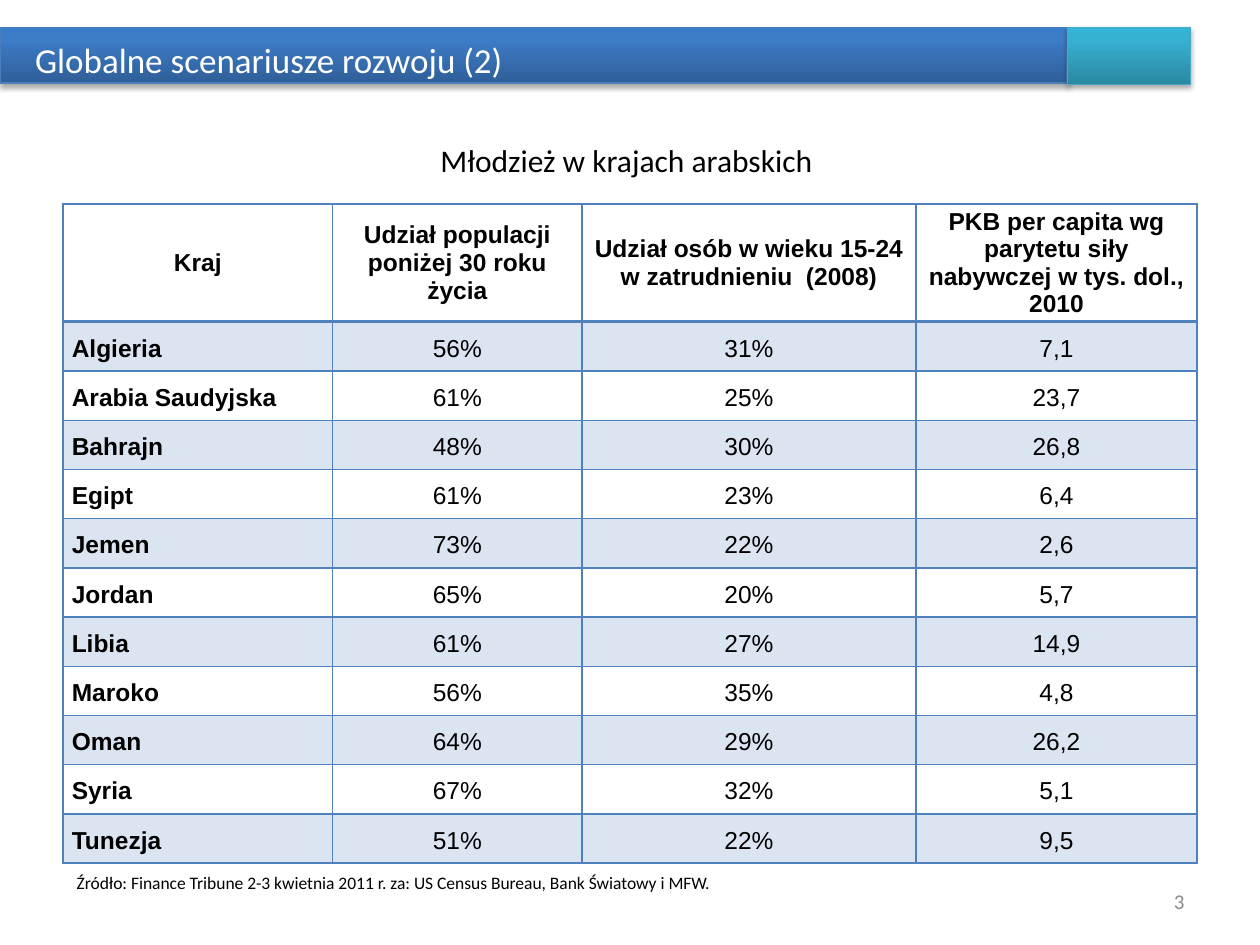
from lxml import etree
from pptx import Presentation, util as u
from pptx.dml.color import RGBColor
from pptx.enum import shapes, text
from pptx.oxml.ns import qn

COLORS = {"ink": "000000", "white": "FFFFFF", "number": "8C8C8C", "grid": "4F81BD",
          "bar_line": "4B7EBC", "accent_line": "46AAC5"}
TITLE = "Globalne scenariusze rozwoju (2)"
SUBTITLE = "Młodzież w krajach arabskich "
SOURCE = "Źródło: Finance Tribune 2-3 kwietnia 2011 r. za: US Census Bureau, Bank Światowy i MFW."
PAGE_NUMBER = "3"
HEADERS = ["Kraj", "Udział populacji poniżej 30 roku życia",
           "Udział osób w wieku 15-24 w zatrudnieniu  (2008)",
           "PKB per capita wg parytetu siły nabywczej w tys. dol., 2010"]
COUNTRIES = [
    ("Algieria", "56%", "31%", "7,1"),
    ("Arabia Saudyjska", "61%", "25%", "23,7"),
    ("Bahrajn", "48%", "30%", "26,8"),
    ("Egipt", "61%", "23%", "6,4"),
    ("Jemen", "73%", "22%", "2,6"),
    ("Jordan", "65%", "20%", "5,7"),
    ("Libia", "61%", "27%", "14,9"),
    ("Maroko", "56%", "35%", "4,8"),
    ("Oman", "64%", "29%", "26,2"),
    ("Syria", "67%", "32%", "5,1"),
    ("Tunezja", "51%", "22%", "9,5"),
]
COLUMN_WIDTHS = [2.14, 1.98, 2.65, 2.23]
HEADER_HEIGHT, TABLE_HEIGHT = 0.9, 5.2
HEADER_SPACING, BODY_SPACING = 1.0, 1.15
BANNERS = [
    (shapes.MSO_SHAPE.RECTANGLE, (0, 0.22, 8.47, 0.44), "bar_line",
     [(0, "2F5F99"), (80, "3D7CC7"), (100, "3A7CCB")]),
    (shapes.MSO_SHAPE.ROUNDED_RECTANGLE, (8.47, 0.22, 0.98, 0.45), "accent_line",
     [(0, "2A88A2"), (80, "37B1D2"), (100, "34B4D6")]),
]
LEFT, CENTER, RIGHT = text.PP_ALIGN.LEFT, text.PP_ALIGN.CENTER, text.PP_ALIGN.RIGHT
TOP, MIDDLE = text.MSO_ANCHOR.TOP, text.MSO_ANCHOR.MIDDLE


def rgb(name):
    return RGBColor.from_string(COLORS[name])


def add_node(parent, tag, **attributes):
    return etree.SubElement(parent, qn(tag), {key: str(value) for key, value in attributes.items()})


def write(frame, words, size, font="Calibri", color="ink", bold=False, align=LEFT, spacing=None):
    para = frame.paragraphs[0]
    para.alignment = align
    para.line_spacing = spacing
    span = para.add_run()
    span.text = words
    span.font.size = u.Pt(size)
    span.font.name = font
    span.font.bold = bold
    span.font.color.rgb = rgb(color)


def add_text(page, place, words, size, anchor=TOP, **style):
    frame = page.shapes.add_textbox(*map(u.Inches, place)).text_frame
    frame.word_wrap = True
    frame.vertical_anchor = anchor
    write(frame, words, size, **style)


def add_banner(page, kind, place, line, stops):
    banner = page.shapes.add_shape(kind, *map(u.Inches, place))
    if kind == shapes.MSO_SHAPE.ROUNDED_RECTANGLE:
        banner.adjustments[0] = 0
    banner.line.color.rgb = rgb(line)
    banner.line.width = u.Pt(0.75)
    banner.fill.gradient()
    banner.fill.gradient_angle = 90
    stop_list = banner.element.spPr.find(".//" + qn("a:gsLst"))
    for stop in list(stop_list):
        stop_list.remove(stop)
    for position, color in stops:
        stop = add_node(stop_list, "a:gs", pos=position * 1000)
        add_node(stop, "a:srgbClr", val=color)
    effects = add_node(banner.element.spPr, "a:effectLst")
    shadow = add_node(effects, "a:outerShdw", blurRad=u.Pt(3.1), dist=u.Pt(1.8),
                      dir=5400000, rotWithShape=0)
    add_node(add_node(shadow, "a:srgbClr", val=COLORS["ink"]), "a:alpha", val=35000)


def add_border(cell, side, points):
    line = add_node(cell._tc.get_or_add_tcPr(), "a:ln" + side, w=u.Pt(points))
    add_node(add_node(line, "a:solidFill"), "a:srgbClr", val=COLORS["grid"])


def format_cell(cell, words, row, column):
    cell.margin_left = cell.margin_right = u.Inches(0.07)
    cell.margin_top = cell.margin_bottom = 0
    cell.vertical_anchor = MIDDLE
    write(cell.text_frame, words, 14, font="Arial", bold=row == 0 or column == 0,
          align=LEFT if row and column == 0 else CENTER,
          spacing=BODY_SPACING if row else HEADER_SPACING)
    for side in "LRTB":
        heavy = (row, side) in ((0, "B"), (1, "T"))
        add_border(cell, side, 2 if heavy else 1)
    if row % 2:
        cell.fill.solid()
        cell.fill.fore_color.rgb = rgb("grid")
        color = cell._tc.tcPr.find(qn("a:solidFill")).find(qn("a:srgbClr"))
        add_node(color, "a:alpha", val=20000)
    else:
        cell.fill.background()


def add_country_table(page):
    rows = [HEADERS, *COUNTRIES]
    place = map(u.Inches, (0.5, 1.62, sum(COLUMN_WIDTHS), TABLE_HEIGHT))
    table = page.shapes.add_table(len(rows), len(HEADERS), *place).table
    table.horz_banding = table.first_row = False
    for column, width in zip(table.columns, COLUMN_WIDTHS):
        column.width = u.Inches(width)
    body_height = (TABLE_HEIGHT - HEADER_HEIGHT) / len(COUNTRIES)
    for row, values in enumerate(rows):
        table.rows[row].height = u.Inches(body_height if row else HEADER_HEIGHT)
        for column, words in enumerate(values):
            format_cell(table.cell(row, column), words, row, column)


def main():
    deck = Presentation()
    deck.slide_width, deck.slide_height = u.Inches(10), u.Inches(7.5)
    page = deck.slides.add_slide(deck.slide_layouts[6])
    for banner in BANNERS:
        add_banner(page, *banner)
    add_text(page, (0.5, 1.07, 9, 0.55), SUBTITLE, 18, align=CENTER)
    add_text(page, (7.17, 6.95, 2.33, 0.4), PAGE_NUMBER, 12, anchor=MIDDLE,
             color="number", align=RIGHT)
    add_text(page, (0.18, 0.05, 8.46, 0.85), TITLE, 20, anchor=MIDDLE, color="white")
    add_country_table(page)
    add_text(page, (0.51, 6.87, 8.98, 0.27), SOURCE, 10)
    deck.save("out.pptx")


if __name__ == "__main__":
    main()
